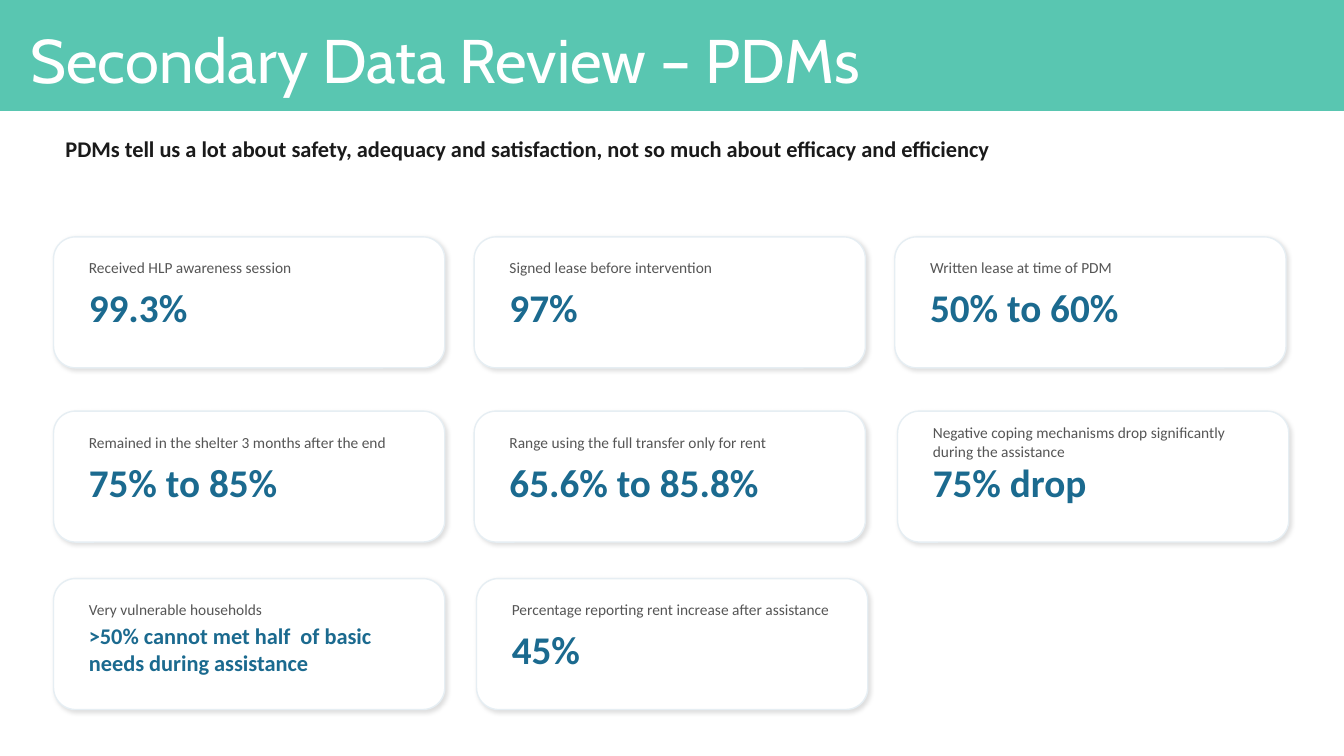
from lxml import etree
from pptx import Presentation
from pptx.dml.color import RGBColor
from pptx.enum.shapes import MSO_SHAPE as Preset
from pptx.enum.text import MSO_ANCHOR as Anchor, PP_ALIGN as Align
from pptx.oxml import parse_xml
from pptx.oxml.ns import nsdecls
from pptx.util import Cm, Pt

TEAL = RGBColor(0x59, 0xC6, 0xB1)
WHITE = RGBColor(0xFF, 0xFF, 0xFF)
INK = RGBColor(0x1A, 0x1A, 0x1A)
GREY = RGBColor(0x55, 0x55, 0x55)
BLUE = RGBColor(0x1B, 0x6A, 0x8F)
CARD_BORDER = RGBColor(0xE6, 0xEE, 0xF3)

SOFT_SHADOW = f"""<a:effectLst {nsdecls('a')}>
  <a:outerShdw blurRad="38100" dist="25400" dir="2700000" rotWithShape="0">
    <a:srgbClr val="000000"><a:alpha val="12000"/></a:srgbClr>
  </a:outerShdw>
</a:effectLst>"""

CARD_WIDTH, CARD_HEIGHT = 9.86, 3.3
FIRST_LEFT, COLUMN_STEP = 1.35, 10.6
ROW_TOPS = [5.97, 10.36, 14.58]
TEXT_INSET = 0.64

# Row, column, label, finding, finding size, sideways shift in cm
CARDS = [
    (0, 0, "Received HLP awareness session", "99.3%", 28, 0),
    (0, 1, "Signed lease before intervention", "97%", 28, 0),
    (0, 2, "Written lease at time of PDM", "50% to 60%", 28, 0),
    (1, 0, "Remained in the shelter 3 months after the end", "75% to 85%", 28, 0),
    (1, 1, "Range using the full transfer only for rent", "65.6% to 85.8%", 28, 0),
    (1, 2, "Negative coping mechanisms drop significantly during the assistance",
     "75% drop", 28, 0.07),
    (2, 0, "Very vulnerable households",
     ">50% cannot met half  of basic needs during assistance", 16, 0),
    (2, 1, "Percentage reporting rent increase after assistance", "45%", 28, 0.06),
]


def write_text(shape, text, size, color, font_name="Calibri", bold=False):
    """Fill a shape with one left-aligned, vertically centred paragraph."""
    frame = shape.text_frame
    frame.word_wrap = True
    frame.vertical_anchor = Anchor.MIDDLE
    paragraph = frame.paragraphs[0]
    paragraph.text = text
    paragraph.alignment = Align.LEFT
    paragraph.font.name = font_name
    paragraph.font.size = Pt(size)
    paragraph.font.bold = bold
    paragraph.font.color.rgb = color
    return paragraph


def add_panel(shapes, preset, left, top, width, height, fill, border, border_width):
    panel = shapes.add_shape(preset, Cm(left), Cm(top), Cm(width), Cm(height))
    panel.shadow.inherit = False
    panel.fill.solid()
    panel.fill.fore_color.rgb = fill
    panel.line.color.rgb = border
    panel.line.width = Pt(border_width)
    return panel


presentation = Presentation()
presentation.slide_width = Cm(33.87)
presentation.slide_height = Cm(19.05)
slide = presentation.slides.add_slide(presentation.slide_layouts[5])

# Title on its band
title = slide.shapes.title
title.left, title.top, title.width, title.height = Cm(0.51), Cm(-0.25), Cm(29.21), Cm(3.68)
heading = write_text(title, "Secondary Data Review – PDMs", 44, WHITE, "Cabin")
heading.line_spacing = 0.9
band = add_panel(slide.shapes, Preset.RECTANGLE, 0, 0, 33.87, 2.77, TEAL, TEAL, 1.5)
title.element.addprevious(band.element)

# Key message
message = slide.shapes.add_textbox(Cm(1.4), Cm(3.23), Cm(31.06), Cm(1.02))
write_text(message, "PDMs tell us a lot about safety, adequacy and satisfaction, "
           "not so much about efficacy and efficiency", 16, INK, bold=True)

# Finding cards
for row, column, label, finding, finding_size, shift in CARDS:
    left = FIRST_LEFT + column * COLUMN_STEP + shift
    top = ROW_TOPS[row]
    card = slide.shapes.add_group_shape().shapes
    panel = add_panel(card, Preset.ROUNDED_RECTANGLE, left, top,
                      CARD_WIDTH, CARD_HEIGHT, WHITE, CARD_BORDER, 1)
    properties = panel.element.spPr
    properties.replace(properties.find("{*}effectLst"), parse_xml(SOFT_SHADOW))

    text_left, text_width = Cm(left + TEXT_INSET), Cm(CARD_WIDTH - 2 * TEXT_INSET)
    label_box = card.add_textbox(text_left, Cm(top + 0.46), text_width, Cm(0.64))
    write_text(label_box, label, 11, GREY)
    finding_box = card.add_textbox(text_left, Cm(top + 1.14), text_width, Cm(1.27))
    write_text(finding_box, finding, finding_size, BLUE, bold=True)

presentation.save("out.pptx")
